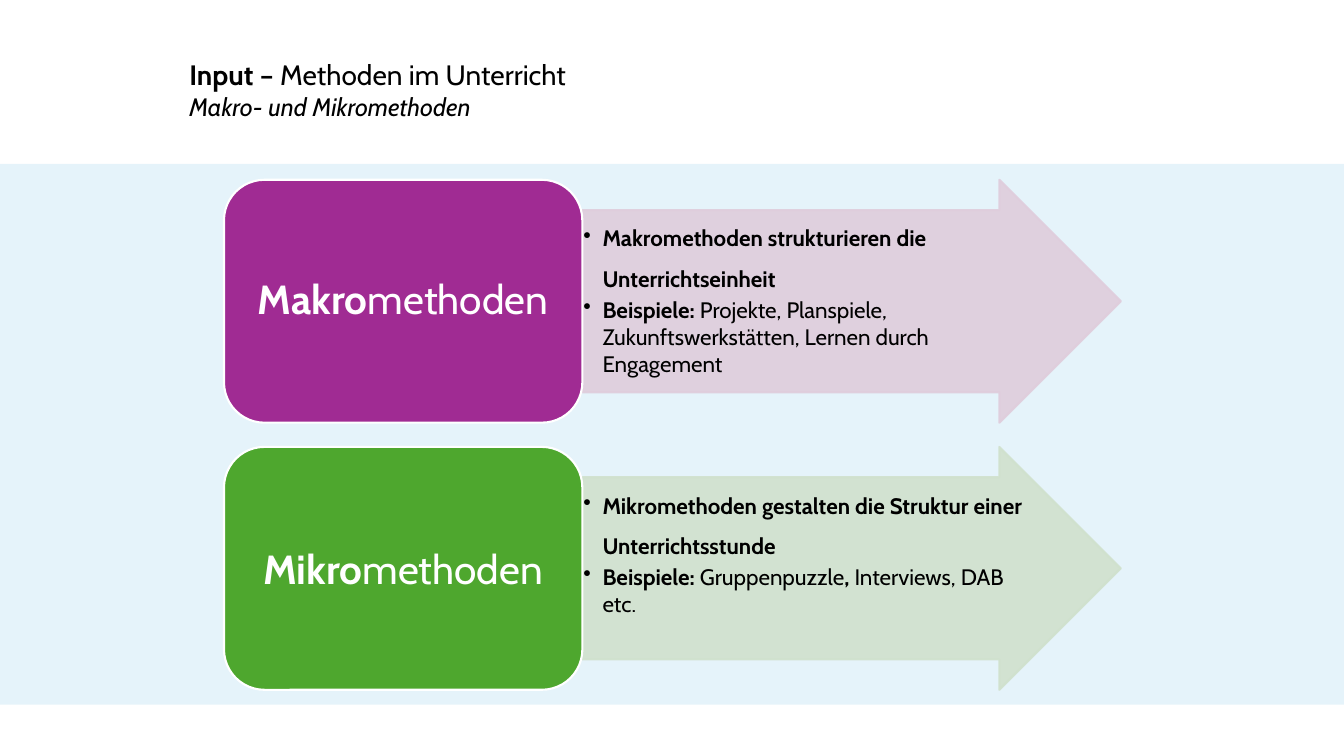
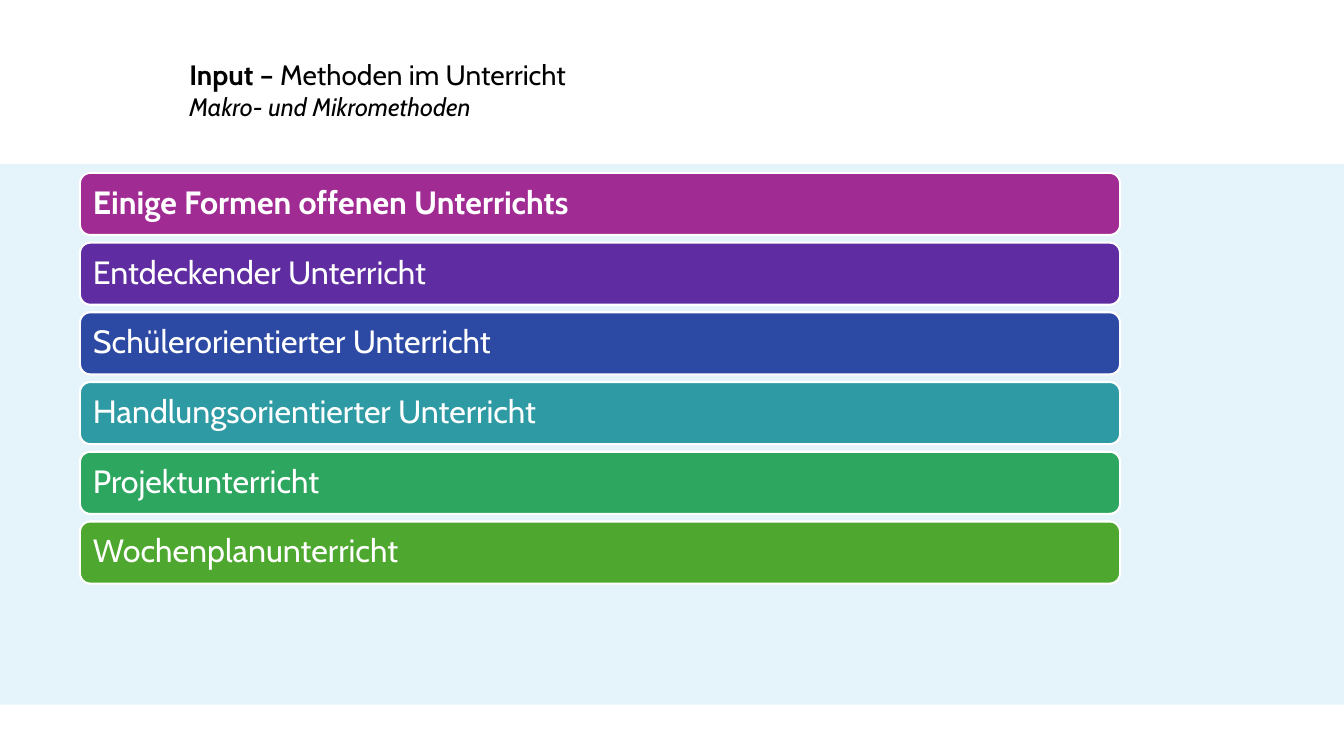
from dataclasses import dataclass

from lxml.etree import SubElement
from pptx import Presentation
from pptx.dml.color import RGBColor
from pptx.enum.shapes import MSO_SHAPE
from pptx.enum.text import MSO_ANCHOR, MSO_AUTO_SIZE, PP_ALIGN
from pptx.oxml.ns import qn
from pptx.util import Pt


@dataclass(frozen=True)
class Theme:
    font: str = "Cabin"
    black: str = "000000"
    white: str = "FFFFFF"
    band: str = "008CCF"
    plum: str = "A02B93"
    violet: str = "5F2CA1"
    blue: str = "2C49A3"
    teal: str = "2D9AA4"
    mint: str = "2DA65F"
    green: str = "4EA72E"
    rose: str = "DFCDDC"
    sage: str = "D0E1CD"
    title: int = 20
    sub: int = 18
    body: int = 16
    label: int = 29
    bar: int = 23
    edge: float = 1.5


def write(par, text, size, color, font, bold=False, italic=False):
    run = par.add_run()
    run.text = text
    run.font.name = font
    run.font.size = Pt(size)
    run.font.bold = bold
    run.font.italic = italic
    run.font.color.rgb = RGBColor.from_string(color)


class Deck:
    def __init__(self, theme):
        self.theme = theme
        self.prs = Presentation()
        self.prs.slide_width = Pt(960)
        self.prs.slide_height = Pt(540)
        self.layout = self.prs.slide_layouts[5]
        self.slide = None

    def page(self):
        first = self.slide is None
        self.slide = self.prs.slides.add_slide(self.layout)
        if first:
            self.band()
        self.title()

    def band(self):
        band = self.shape(MSO_SHAPE.RECTANGLE, (0, 117, 960, 386.4),
                          self.theme.band, alpha=10)
        self.layout.shapes.element.insert(2, band.element)

    def title(self):
        t = self.theme
        box = self.slide.shapes.title
        box.left, box.top, box.width, box.height = map(Pt, (128, 37.4, 459.4, 53.3))
        frame = self.frame(box, (7.2, 3.6, 7.2, 3.6), MSO_ANCHOR.TOP)
        frame.auto_size = MSO_AUTO_SIZE.NONE
        head, sub = frame.paragraphs[0], frame.add_paragraph()
        head.alignment = sub.alignment = PP_ALIGN.LEFT
        write(head, "Input – ", t.title, t.black, t.font, bold=True)
        write(head, "Methoden im Unterricht", t.title, t.black, t.font)
        write(sub, "Makro- und Mikromethoden", t.sub, t.black, t.font, italic=True)

    def shape(self, kind, area, fill, line=None, alpha=100):
        item = self.slide.shapes.add_shape(kind, *map(Pt, area))
        item.shadow.inherit = False
        item.fill.solid()
        item.fill.fore_color.rgb = RGBColor.from_string(fill)
        if line:
            item.line.color.rgb = RGBColor.from_string(line)
            item.line.width = Pt(self.theme.edge)
        else:
            item.line.fill.background()
        if alpha < 100:
            for color in item.element.spPr.iter(qn("a:srgbClr")):
                SubElement(color, qn("a:alpha"), val=str(alpha * 1000))
        return item

    def frame(self, item, pad, anchor):
        frame = item.text_frame
        frame.word_wrap = True
        frame.vertical_anchor = anchor
        (frame.margin_left, frame.margin_top,
         frame.margin_right, frame.margin_bottom) = map(Pt, pad)
        return frame

    def arrow(self, area, fill, points):
        t = self.theme
        item = self.shape(MSO_SHAPE.RIGHT_ARROW, area, fill, fill, 90)
        item.adjustments[0] = 0.75
        frame = self.frame(item, (0.7,) * 4, MSO_ANCHOR.TOP)
        for i, (lead, runs) in enumerate(points):
            par = frame.add_paragraph() if i else frame.paragraphs[0]
            self.bullet(par)
            par.alignment = PP_ALIGN.LEFT
            par.line_spacing = lead
            par.space_after = Pt(3)
            for text, bold in runs:
                write(par, text, t.body, t.black, t.font, bold=bold)

    def bullet(self, par):
        props = par._p.get_or_add_pPr()
        step = Pt(13.7)
        props.set("marL", str(step))
        props.set("indent", str(-step))
        SubElement(props, qn("a:buChar"), char="•")

    def card(self, area, fill, stem, lead):
        t = self.theme
        item = self.shape(MSO_SHAPE.ROUNDED_RECTANGLE, area, fill, t.white)
        par = self.frame(item, (8.6, 4.3, 8.6, 4.3), MSO_ANCHOR.MIDDLE).paragraphs[0]
        par.alignment = PP_ALIGN.CENTER
        par.line_spacing = lead
        write(par, stem, t.label, t.white, t.font, bold=True)
        write(par, "methoden", t.label, t.white, t.font)

    def bar(self, area, fill, text, bold):
        t = self.theme
        item = self.shape(MSO_SHAPE.ROUNDED_RECTANGLE, area, fill, t.white)
        par = self.frame(item, (7.2,) * 4, MSO_ANCHOR.MIDDLE).paragraphs[0]
        par.alignment = PP_ALIGN.LEFT
        par.line_spacing = 0.9
        write(par, text, t.bar, t.white, t.font, bold=bold)


def main():
    t = Theme()
    deck = Deck(t)

    deck.page()
    rows = [
        ("Makro", t.plum, t.rose, 0.9,
         "Makromethoden strukturieren die Unterrichtseinheit",
         [("Projekte, Planspiele, Zukunftswerkstätten, Lernen durch Engagement", False)]),
        ("Mikro", t.green, t.sage, 1.0,
         "Mikromethoden gestalten die Struktur einer Unterrichtsstunde",
         [("Gruppenpuzzle", False), (", ", True), ("Interviews, DAB etc.", False)]),
    ]
    for i, (stem, dark, pale, lead, claim, cases) in enumerate(rows):
        top = 128.4 + i * 190.8
        points = [(1.5, [(claim, True)]), (1.0, [("Beispiele: ", True)] + cases)]
        deck.arrow((416, top, 384.6, 173.5), pale, points)
        deck.card((160, top, 256, 173.5), dark, stem, lead)

    deck.page()
    forms = [
        ("Einige Formen offenen Unterrichts", t.plum),
        ("Entdeckender Unterricht", t.violet),
        ("Schülerorientierter Unterricht", t.blue),
        ("Handlungsorientierter Unterricht", t.teal),
        ("Projektunterricht", t.mint),
        ("Wochenplanunterricht", t.green),
    ]
    for i, (text, fill) in enumerate(forms):
        deck.bar((57.1, 123.5 + i * 49.8, 743, 44.4), fill, text, i == 0)

    deck.prs.save("out.pptx")


if __name__ == "__main__":
    main()
